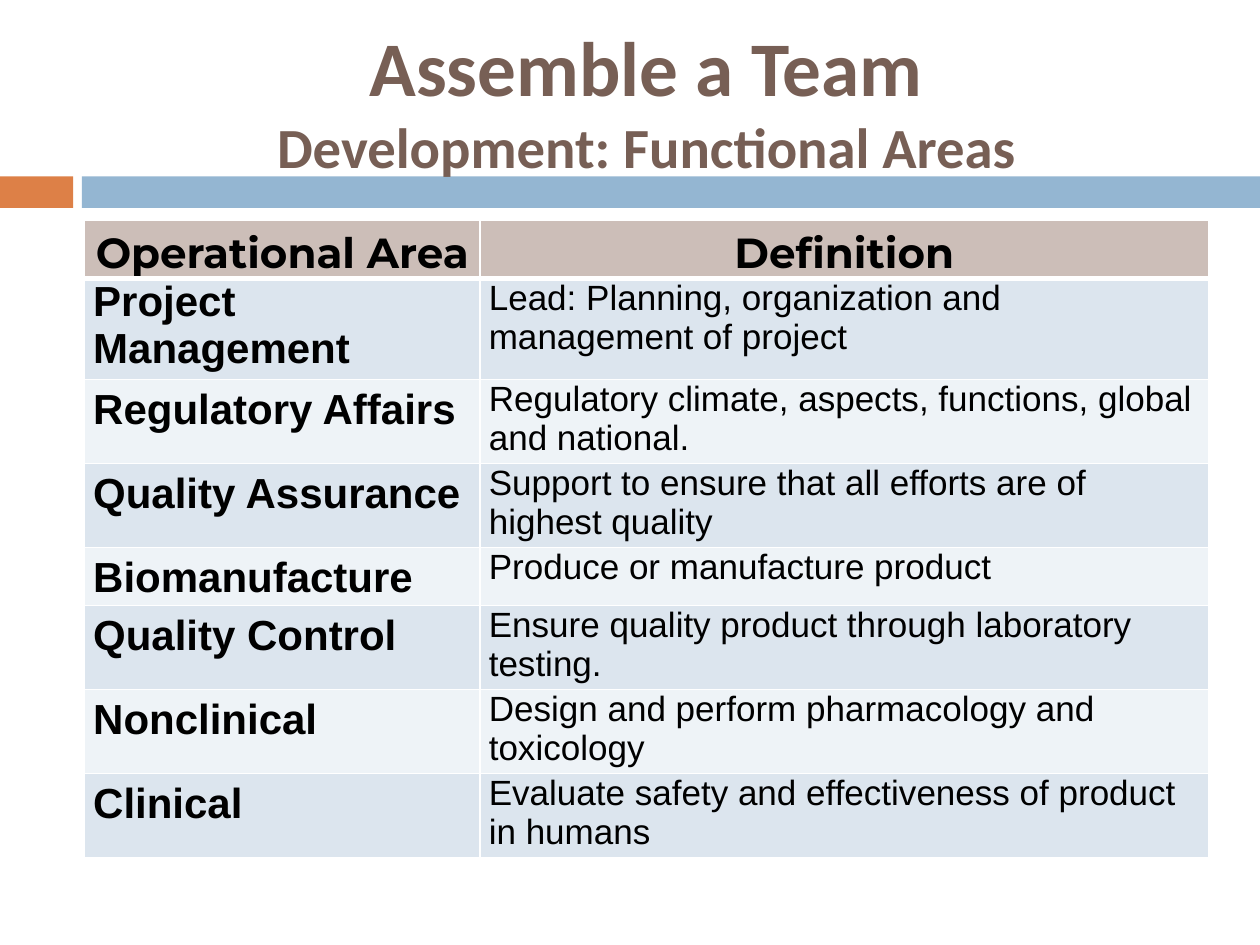
from lxml import etree
from pptx import Presentation
from pptx.dml.color import RGBColor
from pptx.enum.shapes import MSO_SHAPE
from pptx.enum.text import MSO_ANCHOR, PP_ALIGN
from pptx.oxml.ns import qn
from pptx.util import Inches, Pt

RECTANGLE = MSO_SHAPE.RECTANGLE
MIDDLE = MSO_ANCHOR.MIDDLE
CENTER, LEFT = PP_ALIGN.CENTER, PP_ALIGN.LEFT

COLORS = {
    "orange": "DD8047", "blue": "94B6D2", "title": "775F55", "text": "000000",
    "header": "CCBEB8", "dark_row": "DCE5EE", "light_row": "EEF3F7", "border": "FFFFFF",
}
HEADINGS = ("Operational Area", "Definition")
AREAS = [
    ("Project Management", "Lead: Planning, organization and management of project"),
    ("Regulatory Affairs", "Regulatory climate, aspects, functions, global and national."),
    ("Quality Assurance", "Support to ensure that all efforts are of highest quality"),
    ("Biomanufacture", "Produce or manufacture product"),
    ("Quality Control", "Ensure quality product through laboratory testing."),
    ("Nonclinical", "Design and perform pharmacology and toxicology"),
    ("Clinical", "Evaluate safety and effectiveness of product in humans"),
]


def write(paragraph, text, size=24, font="Arial", bold=False, color="text", align=LEFT, spacing=None):
    paragraph.alignment = align
    if spacing:
        paragraph.line_spacing = spacing
    run = paragraph.add_run()
    run.text = text
    run.font.size = Pt(size)
    run.font.name = font
    run.font.bold = bold
    run.font.color.rgb = RGBColor.from_string(COLORS[color])


class SlideBuilder:
    """Holds the style and the current slide, and adds each kind of element."""

    def __init__(self, slide, colors):
        self.slide = slide
        self.colors = colors

    def paint(self, fill, color):
        fill.solid()
        fill.fore_color.rgb = RGBColor.from_string(self.colors[color])

    def band(self, left, width, color):
        shape = self.slide.shapes.add_shape(
            RECTANGLE, Inches(left), Inches(1.4), Inches(width), Inches(0.25))
        shape.shadow.inherit = False
        self.paint(shape.fill, color)
        shape.line.fill.background()

    def title(self, heading, subheading):
        box = self.slide.shapes.add_textbox(Inches(0.67), Inches(0.25), Inches(8.92), Inches(1.08))
        frame = box.text_frame
        frame.word_wrap = True
        frame.vertical_anchor = MIDDLE
        paragraph = frame.paragraphs[0]
        style = {"font": "Calibri", "bold": True, "color": "title", "align": CENTER}
        write(paragraph, heading, size=44.1, **style)
        paragraph.add_line_break()
        write(paragraph, subheading, size=32.4, **style)

    def borders(self, cell, bottom):
        properties = cell._tc.get_or_add_tcPr()
        widths = {"a:lnL": 1, "a:lnR": 1, "a:lnT": 1, "a:lnB": bottom}
        for position, (tag, width) in enumerate(widths.items()):
            line = etree.Element(qn(tag), w=str(Pt(width)))
            fill = etree.SubElement(line, qn("a:solidFill"))
            etree.SubElement(fill, qn("a:srgbClr"), val=self.colors["border"])
            properties.insert(position, line)

    def cell(self, cell, text, fill, bottom=1, **style):
        cell.margin_left = cell.margin_right = Inches(0.07)
        cell.margin_top = cell.margin_bottom = 0
        self.paint(cell.fill, fill)
        self.borders(cell, bottom)
        write(cell.text_frame.paragraphs[0], text, **style)

    def table(self, headings, areas):
        row_height = 0.41
        row_count = len(areas) + 1
        table = self.slide.shapes.add_table(
            row_count, 2, Inches(0.67), Inches(1.75), Inches(8.92),
            Inches(row_height * row_count)).table
        for column, width in zip(table.columns, (3.14, 5.78)):
            column.width = Inches(width)
        for index, heading in enumerate(headings):
            self.cell(table.cell(0, index), heading, "header", bottom=3,
                      font="Montserrat", bold=True, align=CENTER, spacing=1.15)
        for row, (area, definition) in enumerate(areas, start=1):
            fill = "dark_row" if row % 2 else "light_row"
            self.cell(table.cell(row, 0), area, fill, bold=True,
                      spacing=1.15 if row > 1 else None)
            self.cell(table.cell(row, 1), definition, fill, size=20)


def main():
    presentation = Presentation()
    presentation.slide_width, presentation.slide_height = Inches(10), Inches(7.5)
    slide = presentation.slides.add_slide(presentation.slide_layouts[6])
    builder = SlideBuilder(slide, COLORS)
    builder.band(0, 0.58, "orange")
    builder.band(0.65, 9.35, "blue")
    builder.title("Assemble a Team", "Development: Functional Areas")
    builder.table(HEADINGS, AREAS)
    presentation.save("out.pptx")


if __name__ == "__main__":
    main()
